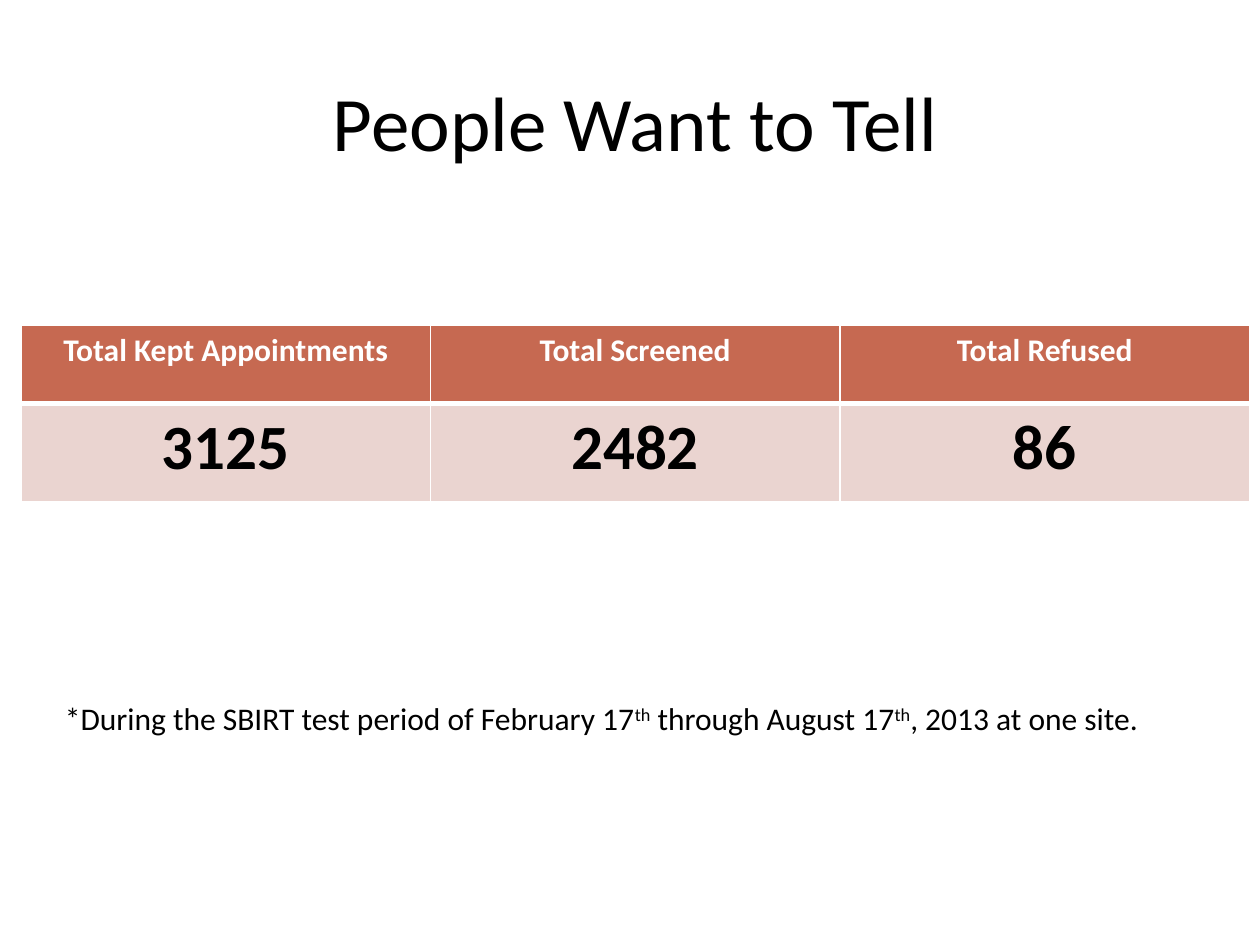
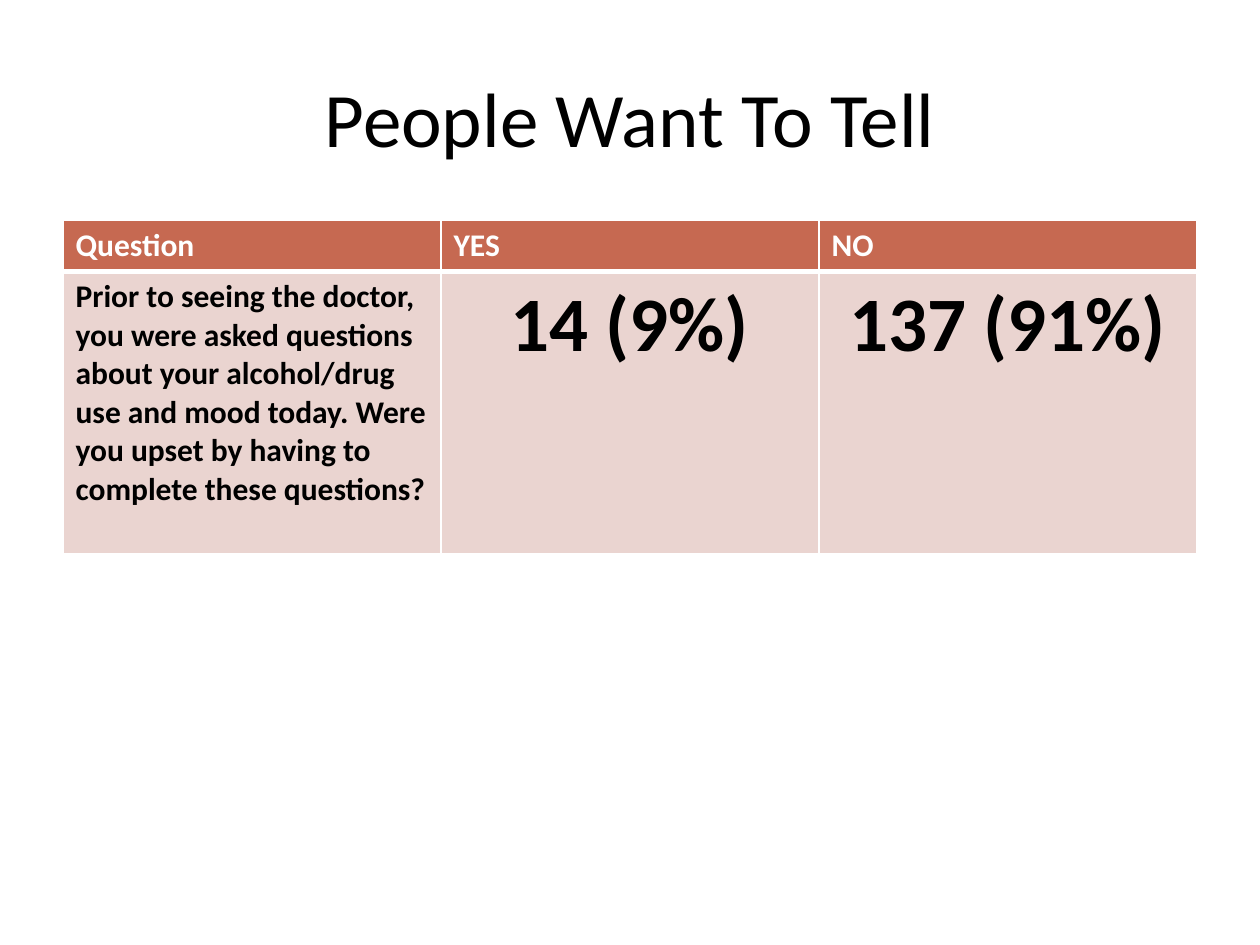
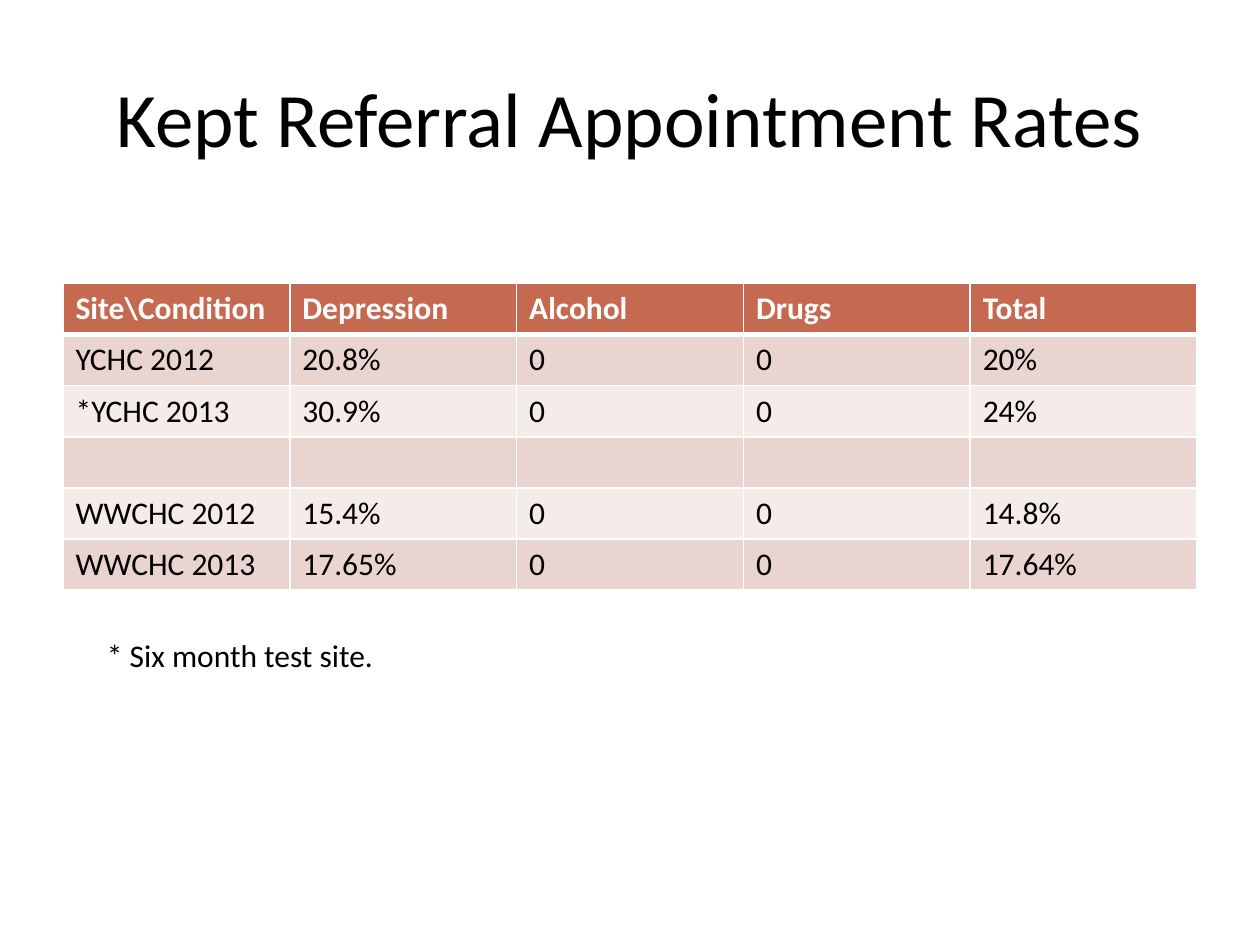
from lxml import etree
from pptx import Presentation
from pptx.dml.color import RGBColor
from pptx.enum.text import MSO_ANCHOR, PP_ALIGN
from pptx.oxml.ns import qn
from pptx.util import Pt

LEFT, CENTER = PP_ALIGN.LEFT, PP_ALIGN.CENTER
MIDDLE = MSO_ANCHOR.MIDDLE
FONT = "Calibri"
BLACK = RGBColor(0x00, 0x00, 0x00)
WHITE = RGBColor(0xFF, 0xFF, 0xFF)
RUST = RGBColor(0xC6, 0x69, 0x51)
BANDS = [RGBColor(0xEA, 0xD4, 0xD0), RGBColor(0xF5, 0xEB, 0xE9)]
TITLE_SIZE, BODY_SIZE = 44, 18


def add_run(p, text, size=BODY_SIZE, color=BLACK, bold=False):
    r = p.add_run()
    r.text = text
    r.font.name = FONT
    r.font.size = Pt(size)
    r.font.bold = bold
    r.font.color.rgb = color
    return r


def add_border(cell, side, width):
    ln = etree.SubElement(cell._tc.get_or_add_tcPr(), qn("a:" + side), w=str(Pt(width)))
    fill = etree.SubElement(ln, qn("a:solidFill"))
    etree.SubElement(fill, qn("a:srgbClr"), val=str(WHITE))


slides = [
    {
        "title": "People Want to Tell",
        "title_at": (39, 24),
        "table_at": (12, 186, 702),
        "heights": [44.6, 56],
        "rows": [
            ["Total Kept Appointments", "Total Screened", "Total Refused"],
            ["3125", "2482", "86"],
        ],
        "header_align": CENTER,
        "body_styles": [(36, True, CENTER)] * 3,
        "note_at": (30, 396, 642),
        "note": [
            ("*During the SBIRT test period of February 17", False),
            ("th", True),
            (" through August 17", False),
            ("th", True),
            (", 2013 at one site.", False),
        ],
    },
    {
        "title": "People Want To Tell",
        "title_at": (36, 21.6),
        "table_at": (36, 126, 648),
        "heights": [29.2, 161],
        "rows": [
            ["Question", "YES", "NO"],
            [
                "Prior to seeing the doctor, you were asked questions about your "
                "alcohol/drug use and mood today. Were you upset by having to "
                "complete these questions?",
                "14 (9%)",
                "137 (91%)",
            ],
        ],
        "header_align": LEFT,
        "body_styles": [(BODY_SIZE, True, LEFT)] + [(44, True, CENTER)] * 2,
        "note": [],
    },
    {
        "title": "Kept Referral Appointment Rates",
        "title_at": (36, 21.6),
        "table_at": (36, 162, 648),
        "heights": [29.2] * 6,
        "rows": [
            ["Site\\Condition", "Depression", "Alcohol", "Drugs", "Total"],
            ["YCHC 2012", "20.8%", "0", "0", "20%"],
            ["*YCHC 2013", "30.9%", "0", "0", "24%"],
            [""] * 5,
            ["WWCHC 2012", "15.4%", "0", "0", "14.8%"],
            ["WWCHC 2013", "17.65%", "0", "0", "17.64%"],
        ],
        "header_align": LEFT,
        "body_styles": [(BODY_SIZE, False, LEFT)] * 5,
        "note_at": (54, 360, 168.5),
        "note": [("* Six month test site.", False)],
    },
]

prs = Presentation()
prs.slide_width, prs.slide_height = Pt(720), Pt(540)

for data in slides:
    s = prs.slides.add_slide(prs.slide_layouts[5])

    title = s.shapes.title
    title.left, title.top = [Pt(v) for v in data["title_at"]]
    title.width, title.height = Pt(648), Pt(90)
    tf = title.text_frame
    tf.vertical_anchor = MIDDLE
    p = tf.paragraphs[0]
    p.alignment = CENTER
    add_run(p, data["title"], TITLE_SIZE)

    rows, heights = data["rows"], data["heights"]
    left, top, width = data["table_at"]
    columns = len(rows[0])
    table = s.shapes.add_table(
        len(rows), columns, Pt(left), Pt(top), Pt(width), Pt(sum(heights))
    ).table
    for column in table.columns:
        column.width = Pt(width / columns)
    for i, row in enumerate(rows):
        table.rows[i].height = Pt(heights[i])
        for j, text in enumerate(row):
            cell = table.cell(i, j)
            add_border(cell, "lnL", 1)
            add_border(cell, "lnR", 1)
            add_border(cell, "lnT", 3 if i == 1 else 1)
            add_border(cell, "lnB", 3 if i == 0 else 1)
            cell.fill.solid()
            if i == 0:
                fill, color = RUST, WHITE
                size, bold, align = BODY_SIZE, True, data["header_align"]
            else:
                fill, color = BANDS[(i - 1) % 2], BLACK
                size, bold, align = data["body_styles"][j]
            cell.fill.fore_color.rgb = fill
            p = cell.text_frame.paragraphs[0]
            p.alignment = align
            if text:
                add_run(p, text, size, color, bold)

    if data["note"]:
        left, top, width = data["note_at"]
        note = s.shapes.add_textbox(Pt(left), Pt(top), Pt(width), Pt(29))
        tf = note.text_frame
        tf.word_wrap = False
        for text, raised in data["note"]:
            r = add_run(tf.paragraphs[0], text)
            if raised:
                r._r.get_or_add_rPr().set("baseline", "30000")

prs.save("out.pptx")
